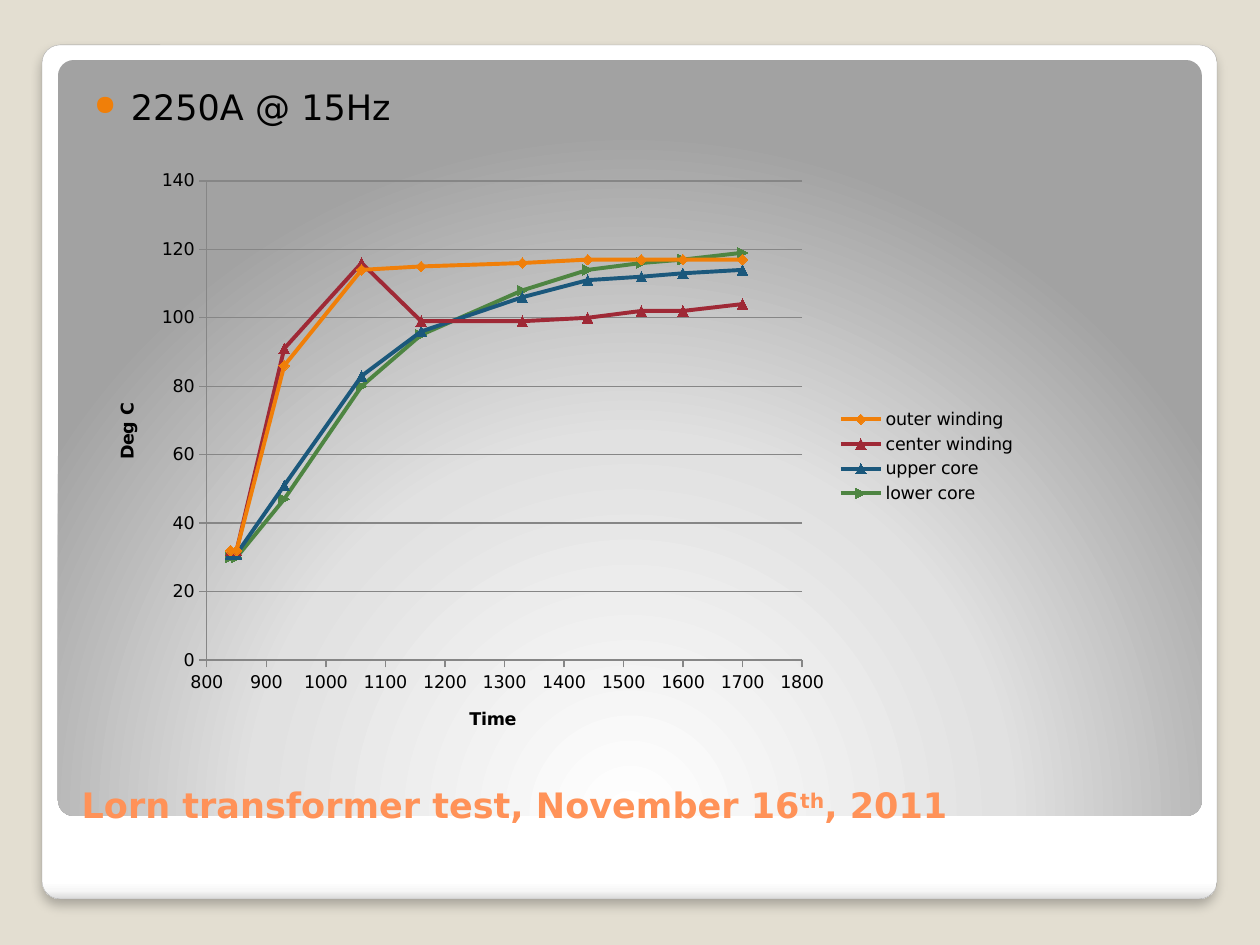
from dataclasses import dataclass

from lxml.etree import SubElement
from pptx import Presentation
from pptx.chart.data import XyChartData
from pptx.dml.color import RGBColor
from pptx.enum.chart import XL_CHART_TYPE as ChartType
from pptx.enum.chart import XL_LEGEND_POSITION as LegendPosition
from pptx.enum.chart import XL_MARKER_STYLE as Marker
from pptx.enum.chart import XL_TICK_MARK as TickMark
from pptx.enum.shapes import MSO_SHAPE as Preset
from pptx.enum.text import MSO_ANCHOR as Anchor
from pptx.enum.text import MSO_AUTO_SIZE as AutoSize
from pptx.enum.text import PP_ALIGN as Align
from pptx.oxml import parse_xml
from pptx.oxml.ns import nsdecls, qn
from pptx.util import Emu, Inches, Pt

FONT = "DejaVu Sans"
BLACK = RGBColor(0x00, 0x00, 0x00)
BACKDROP = RGBColor(0xE3, 0xDE, 0xD1)
CARD_EDGE = RGBColor(0xA4, 0xA4, 0xA4)
TITLE_ORANGE = RGBColor(0xFF, 0x92, 0x58)
AXIS_GRAY = RGBColor(0x86, 0x86, 0x86)
ORANGE = RGBColor(0xF0, 0x7F, 0x09)
RED = RGBColor(0x9F, 0x29, 0x36)
BLUE = RGBColor(0x1B, 0x58, 0x7C)
GREEN = RGBColor(0x4E, 0x85, 0x42)


@dataclass(frozen=True)
class Box:
    left: int
    top: int
    width: int
    height: int


@dataclass(frozen=True)
class Card:
    box: Box
    stops: tuple[tuple[int, str], ...]
    direction: str


@dataclass(frozen=True)
class Sensor:
    name: str
    color: RGBColor
    marker: Marker
    temperatures: tuple[int, ...]


OUTER_CARD = Card(
    Box(42, 45, 1175, 854),
    ((0, "FFFFFF"), (98, "FFFFFF"), (99, "F7F7F7"), (100, "DADADA")),
    '<a:lin ang="5400000" scaled="0"/>',
)
INNER_CARD = Card(
    Box(58, 60, 1144, 756),
    ((0, "FFFFFF"), (55, "E1E1E1"), (100, "A2A2A2")),
    '<a:path path="circle"><a:fillToRect l="50000" t="175000" r="50000" b="-75000"/></a:path>',
)
TITLE_BOX = Box(69, 687, 1128, 145)
BODY_BOX = Box(69, 73, 1128, 577)
CHART_BOX = Box(84, 157, 945, 599)
PLOT_AREA = {"x": 0.13, "y": 0.04, "w": 0.63, "h": 0.8}

TIMES = (840, 850, 930, 1060, 1160, 1330, 1440, 1530, 1600, 1700)
SENSORS = (
    Sensor("outer winding ", ORANGE, Marker.DIAMOND,
           (32, 32, 86, 114, 115, 116, 117, 117, 117, 117)),
    Sensor("center winding", RED, Marker.TRIANGLE,
           (32, 32, 91, 116, 99, 99, 100, 102, 102, 104)),
    Sensor("upper core", BLUE, Marker.TRIANGLE,
           (31, 31, 51, 83, 96, 106, 111, 112, 113, 114)),
    Sensor("lower core", GREEN, Marker.DOT,
           (30, 30, 47, 80, 95, 108, 114, 116, 117, 119)),
)


def px(length: int) -> Emu:
    return Emu(round(length * 914400 / 126))


def place(box: Box) -> tuple[Emu, Emu, Emu, Emu]:
    return px(box.left), px(box.top), px(box.width), px(box.height)


def style_font(font, size: int, color: RGBColor, bold: bool = False) -> None:
    font.name = FONT
    font.size = Pt(size)
    font.bold = bold
    font.color.rgb = color


def add_card(slide, card: Card):
    shape = slide.shapes.add_shape(Preset.ROUNDED_RECTANGLE, *place(card.box))
    shape.adjustments[0] = 0.021
    shape.shadow.inherit = False
    shape.line.fill.background()
    stops = "".join(
        f'<a:gs pos="{position * 1000}"><a:srgbClr val="{color}"/></a:gs>'
        for position, color in card.stops
    )
    gradient = parse_xml(
        f'<a:gradFill {nsdecls("a")} rotWithShape="1">'
        f"<a:gsLst>{stops}</a:gsLst>{card.direction}</a:gradFill>"
    )
    shape._element.spPr.find(qn("a:prstGeom")).addnext(gradient)
    return shape


def add_soft_shadow(shape) -> None:
    effects = shape._element.spPr.find(qn("a:effectLst"))
    effects.append(parse_xml(
        f'<a:outerShdw {nsdecls("a")} blurRad="{Pt(6)}" dist="{Pt(4)}" dir="5400000">'
        '<a:srgbClr val="000000"><a:alpha val="25000"/></a:srgbClr></a:outerShdw>'
    ))


def set_title(slide) -> None:
    title = slide.shapes.title
    slide.shapes._spTree.append(title._element)  # bring in front of the cards
    title.left, title.top, title.width, title.height = place(TITLE_BOX)
    frame = title.text_frame
    frame.vertical_anchor = Anchor.BOTTOM
    frame.auto_size = AutoSize.NONE
    paragraph = frame.paragraphs[0]
    paragraph.alignment = Align.LEFT
    for part in ("Lorn transformer test, November 16", "th", ", 2011"):
        run = paragraph.add_run()
        run.text = part
        style_font(run.font, 20, TITLE_ORANGE, bold=True)
    paragraph.runs[1].font._element.set("baseline", "30000")


def add_test_condition(slide) -> None:
    frame = slide.shapes.add_textbox(*place(BODY_BOX)).text_frame
    frame.word_wrap = True
    frame.margin_left, frame.margin_top = Inches(0.2), Inches(0.1)
    paragraph = frame.paragraphs[0]
    paragraph.text = "2250A @ 15Hz"
    paragraph.space_before = Pt(2.5)
    style_font(paragraph.runs[0].font, 20, BLACK)
    properties = paragraph._p.get_or_add_pPr()
    indent = Inches(0.29)
    properties.set("marL", str(indent))
    properties.set("indent", str(-indent))
    bullet_color = SubElement(properties, qn("a:buClr"))
    SubElement(bullet_color, qn("a:srgbClr"), val=str(ORANGE))
    SubElement(properties, qn("a:buSzPct"), val="80000")
    SubElement(properties, qn("a:buChar"), char="●")


def format_axis(axis, title: str, low: int, high: int, step: int) -> None:
    axis.minimum_scale, axis.maximum_scale, axis.major_unit = low, high, step
    axis.major_tick_mark = TickMark.OUTSIDE
    axis.format.line.color.rgb = AXIS_GRAY
    axis.tick_labels.number_format = "General"
    axis.tick_labels.number_format_is_linked = False
    frame = axis.axis_title.text_frame
    frame.text = title
    style_font(frame.paragraphs[0].runs[0].font, 10, BLACK, bold=True)


def fix_plot_area(chart) -> None:
    """Pin the inner plot area to fixed fractions of the chart."""
    plot_area = chart._chartSpace.chart.plotArea
    for automatic in plot_area.findall(qn("c:layout")):
        plot_area.remove(automatic)
    sides = "".join(f'<c:{key} val="{value}"/>' for key, value in PLOT_AREA.items())
    plot_area.insert(0, parse_xml(
        f'<c:layout {nsdecls("c")}><c:manualLayout><c:layoutTarget val="inner"/>'
        f'<c:xMode val="edge"/><c:yMode val="edge"/>{sides}</c:manualLayout></c:layout>'
    ))


def add_temperature_chart(slide) -> None:
    chart_data = XyChartData()
    for sensor in SENSORS:
        readings = chart_data.add_series(sensor.name)
        for time, temperature in zip(TIMES, sensor.temperatures):
            readings.add_data_point(time, temperature)
    chart = slide.shapes.add_chart(
        ChartType.XY_SCATTER_LINES, *place(CHART_BOX), chart_data
    ).chart
    style_font(chart.font, 10, BLACK)
    chart.has_title = False
    chart.has_legend = True
    chart.legend.position = LegendPosition.RIGHT
    chart.legend.include_in_layout = False
    chart.plots[0].vary_by_categories = False
    format_axis(chart.category_axis, "Time", 800, 1800, 100)
    format_axis(chart.value_axis, "Deg C", 0, 140, 20)
    chart.category_axis.has_major_gridlines = False
    chart.value_axis.major_gridlines.format.line.color.rgb = AXIS_GRAY
    fix_plot_area(chart)
    for series, sensor in zip(chart.plots[0].series, SENSORS):
        series.smooth = False
        series.format.line.width = Pt(2.25)
        series.format.line.color.rgb = sensor.color
        series.marker.style = sensor.marker
        series.marker.size = 6
        series.marker.format.fill.solid()
        series.marker.format.fill.fore_color.rgb = sensor.color
        series.marker.format.line.color.rgb = sensor.color


def main() -> None:
    deck = Presentation()
    deck.slide_width, deck.slide_height = Inches(10), Inches(7.5)
    slide = deck.slides.add_slide(deck.slide_layouts[5])
    slide.background.fill.solid()
    slide.background.fill.fore_color.rgb = BACKDROP
    frame_card = add_card(slide, OUTER_CARD)
    frame_card.line.color.rgb = CARD_EDGE
    frame_card.line.width = Pt(0.16)
    add_soft_shadow(frame_card)
    add_card(slide, INNER_CARD)
    set_title(slide)
    add_test_condition(slide)
    add_temperature_chart(slide)
    deck.save("out.pptx")


if __name__ == "__main__":
    main()
